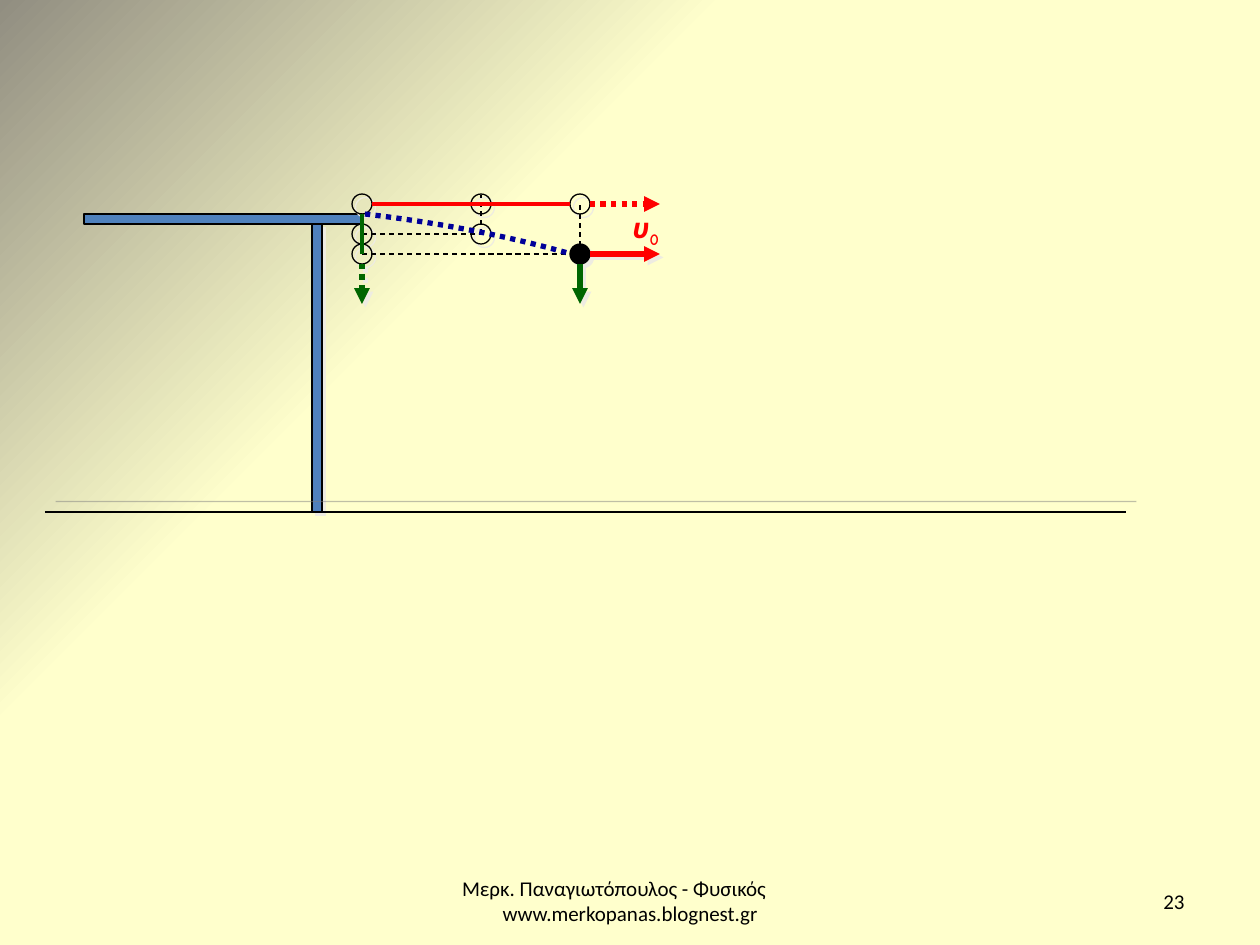
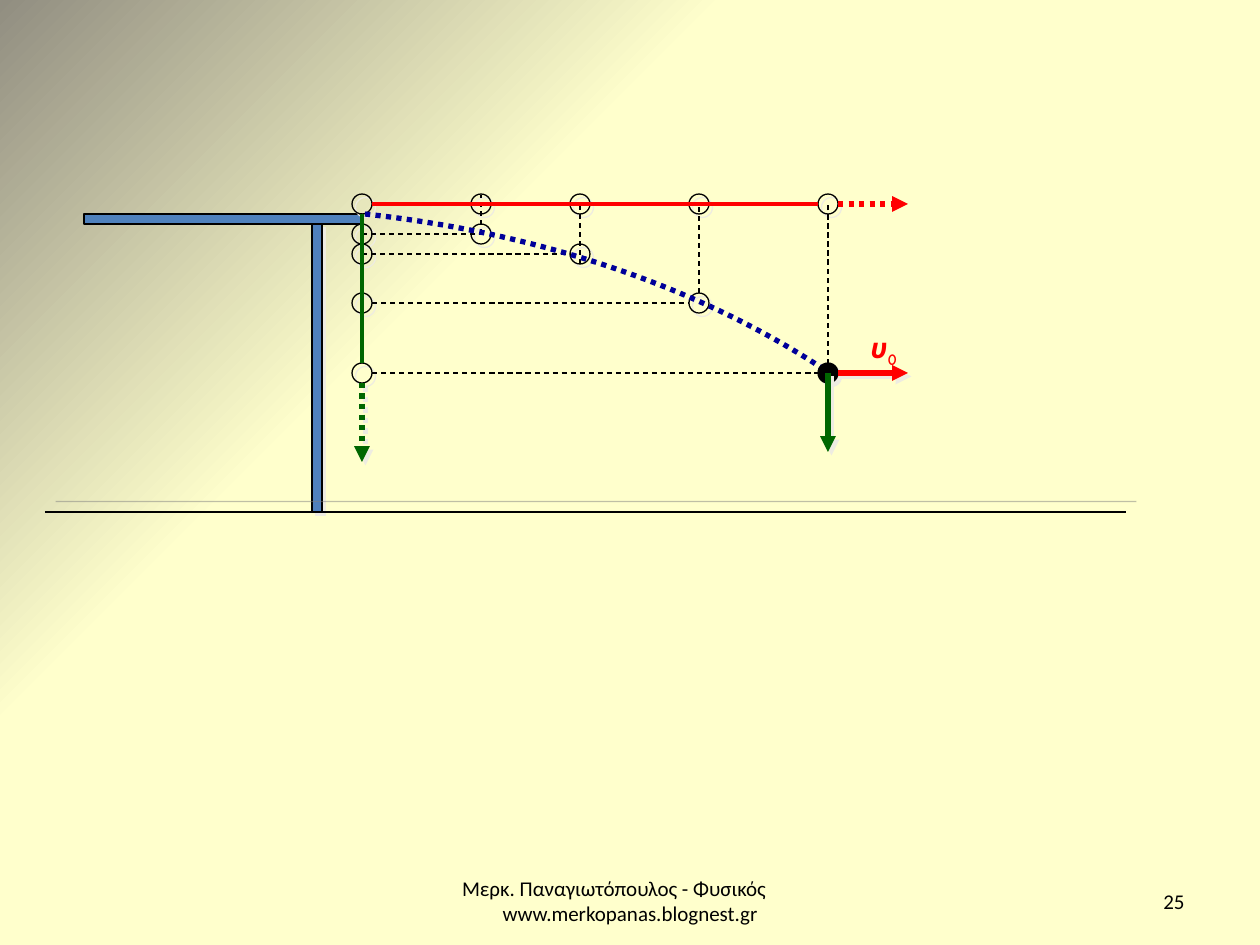
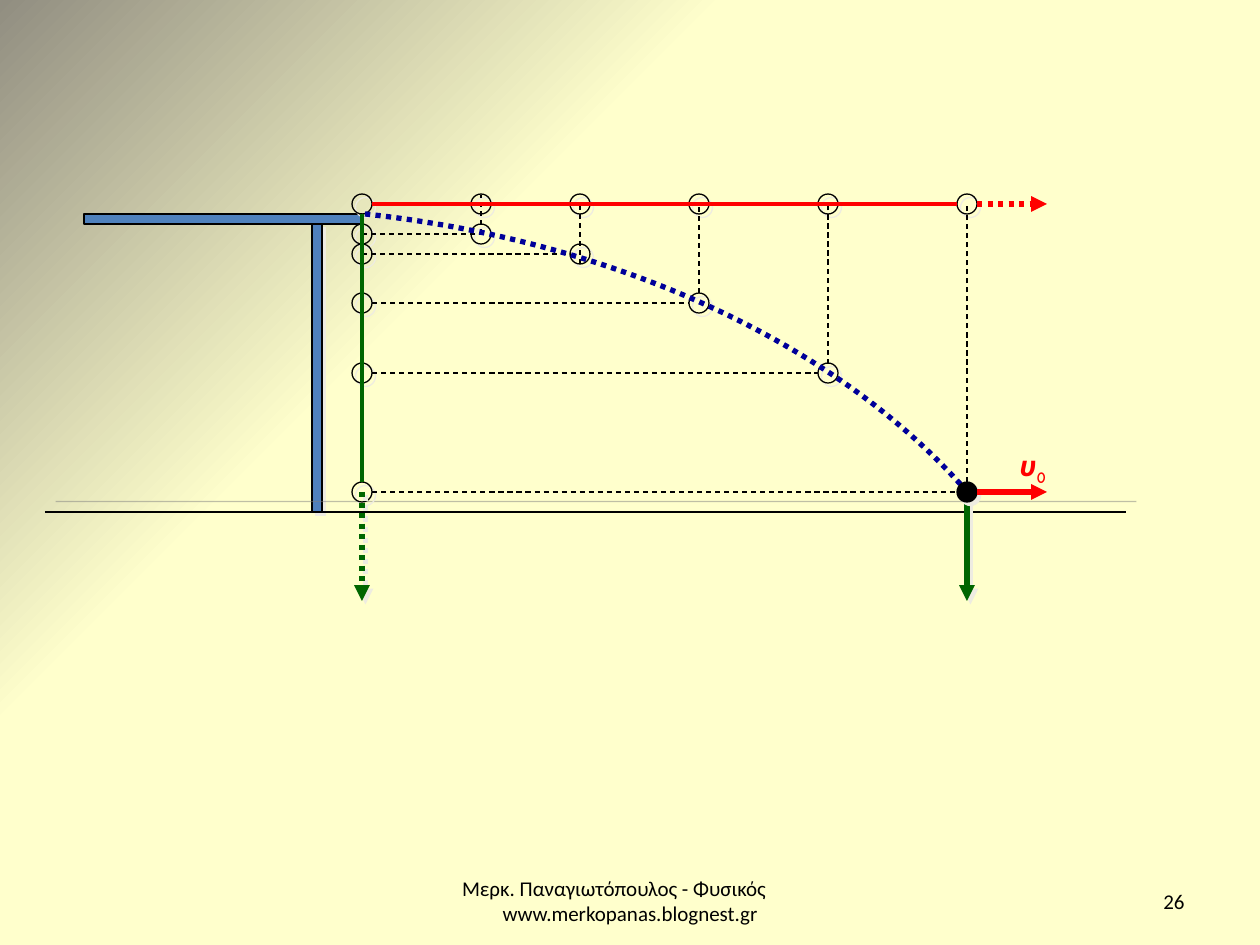
from collections import namedtuple
from lxml.etree import SubElement as Sub
from pptx import Presentation
from pptx.dml.color import RGBColor as RGB
from pptx.enum.dml import MSO_LINE as DASH
from pptx.enum.shapes import MSO_CONNECTOR as CONN, MSO_SHAPE as SHAPE
from pptx.enum.text import MSO_ANCHOR as ANCHOR, PP_ALIGN as ALIGN
from pptx.oxml.ns import qn
from pptx.util import Emu, Inches, Pt

# Colours and fonts
CREAM = RGB(0xFF, 0xFF, 0xCC)
STONE = RGB(0x91, 0x8E, 0x81)
BLACK = RGB(0, 0, 0)
BLUE = RGB(0x4F, 0x81, 0xBD)
NAVY = RGB(0, 0, 0x99)
RED = RGB(0xFF, 0, 0)
GREEN = RGB(0, 0x66, 0)
PALE = RGB(0xEE, 0xEC, 0xE1)
GREY = RGB(0x80, 0x80, 0x80)
SANS, COMIC = "Calibri", "Comic Neue"

# Shadows: colour, opacity %, distance in points, angle in degrees
SOFT = (PALE, 100, 2.8, 45)
FAR = (GREY, 50, 8.5, 315)

# Lengths in px
UNIT = 914400 / 126
RAD = 10          # ball radius
LEFT, TOP = 362, 204   # centre of the ball at the start
REACH = 80        # from ball centre to tip of a red arrow

# Ball positions, with the ends of their dashed guides
Stop = namedtuple("Stop", "x y top foot near far")
STOPS = [
    Stop(481, 234, 195, 234, 362, 481),
    Stop(580, 254, 204, 264, 362, 570),
    Stop(699, 303, 204, 293, 372, 689),
    Stop(828, 373, 204, 364, 372, 818),
    Stop(967, 492, 204, 482, 372, 957),
]

# One view per slide: page, number of stops, curve points after its start,
# label box, (from, to) of the dotted and solid green arrows,
# whether the solid one lies over the ball, shadow of the red arrow
View = namedtuple("View", "page count curve label ghost fall over shade")
VIEWS = [
    View("23", 2, [(441, 223), (515, 237), (585, 258)], (620, 204, 69, 47),
         (264, 304), (264, 304), True, SOFT),
    View("25", 4, [(539, 233), (701, 287), (828, 372)], (858, 324, 69, 47),
         (383, 462), (373, 452), True, SOFT),
    View("26", 5, [(622, 242), (847, 348), (975, 501)], (1007, 442, 59, 47),
         (492, 601), (492, 601), False, None),
]


def px(num):
    return Emu(round(num * UNIT))


def write(para, text, size=12, font=SANS, color=BLACK, bold=False,
          slant=False, base=0):
    run = para.add_run()
    run.text = text
    face = run.font
    face.size, face.name, face.color.rgb = Pt(size), font, color
    face.bold, face.italic = bold, slant
    if base:
        run._r.get_or_add_rPr().set("baseline", str(base * 1000))


class Deck:
    def __init__(self):
        self.prs = Presentation()
        self.prs.slide_width, self.prs.slide_height = Inches(10), Inches(7.5)
        self.slide = None
        self.paint()

    def paint(self):
        """Give the master a gradient that spreads from the lower right."""
        master = self.prs.slide_master
        fill = master.background.fill
        fill.gradient()
        for stop, (pos, color) in zip(fill.gradient_stops,
                                      [(0.67, CREAM), (1, STONE)]):
            stop.position, stop.color.rgb = pos, color
        grad = master.element.find(".//" + qn("p:bg") + "//" + qn("a:gradFill"))
        grad.remove(grad.find(qn("a:lin")))
        ring = Sub(grad, qn("a:path"), path="circle")
        Sub(ring, qn("a:fillToRect"), l="100000", t="100000")

    def new(self):
        self.slide = self.prs.slides.add_slide(self.prs.slide_layouts[6])

    def style(self, item, color=BLACK, width=0.75, dash=None, shade=None):
        """Set outline and shadow."""
        line = item.line
        line.color.rgb, line.width = color, Pt(width)
        if dash:
            line.dash_style = dash
        fx = Sub(item.element.spPr, qn("a:effectLst"))
        if shade:
            tint, alpha, dist, angle = shade
            cast = Sub(fx, qn("a:outerShdw"), dist=str(Pt(dist)),
                       dir=str(angle * 60000), algn="ctr", rotWithShape="0")
            clr = Sub(cast, qn("a:srgbClr"), val=str(tint))
            Sub(clr, qn("a:alpha"), val=str(alpha * 1000))

    def shape(self, kind, box, fill=None, shade=None):
        item = self.slide.shapes.add_shape(kind, *map(px, box))
        if fill is None:
            item.fill.background()
        else:
            item.fill.solid()
            item.fill.fore_color.rgb = fill
        self.style(item, shade=shade)

    def ball(self, x, y, fill=None):
        self.shape(SHAPE.OVAL, (x - RAD, y - RAD, 2 * RAD, 2 * RAD),
                   fill, SOFT)

    def line(self, x1, y1, x2, y2, head=False, **look):
        item = self.slide.shapes.add_connector(
            CONN.STRAIGHT, *map(px, (x1, y1, x2, y2)))
        self.style(item, **look)
        if head:
            Sub(item.element.spPr.find(qn("a:ln")), qn("a:tailEnd"),
                type="triangle")

    def arrow(self, *ends, **look):
        self.line(*ends, head=True, width=3, **look)

    def curve(self, start, points):
        """Draw one Bezier arc: two control points, then the end."""
        form = self.slide.shapes.build_freeform(*start, scale=UNIT)
        form.add_line_segments(points, close=False)
        item = form.convert_to_shape()
        item.fill.background()
        self.style(item, NAVY, 3, DASH.ROUND_DOT)
        route = item.element.spPr.find(".//" + qn("a:path"))
        bend = Sub(route, qn("a:cubicBezTo"))
        for leg in route.findall(qn("a:lnTo")):
            bend.append(leg[0])
            route.remove(leg)

    def text(self, box, align=ALIGN.LEFT, anchor=ANCHOR.TOP):
        frame = self.slide.shapes.add_textbox(*map(px, box)).text_frame
        frame.word_wrap, frame.vertical_anchor = True, anchor
        frame.paragraphs[0].alignment = align
        return frame

    def footer(self, page):
        shift = 32
        frame = self.text((431, 876, 399, 50), ALIGN.CENTER, ANCHOR.MIDDLE)
        frame.margin_right = px(13 + shift)
        write(frame.paragraphs[0], "Μερκ. Παναγιωτόπουλος - Φυσικός")
        site = frame.add_paragraph()
        site.alignment = ALIGN.CENTER
        site._p.get_or_add_pPr().set("marL", str(px(shift)))
        write(site, "www.merkopanas.blognest.gr")
        frame = self.text((903, 876, 294, 50), ALIGN.RIGHT, ANCHOR.MIDDLE)
        write(frame.paragraphs[0], page)

    def label(self, box):
        para = self.text(box).paragraphs[0]
        gap = Sub(para._p.get_or_add_pPr(), qn("a:spcBef"))
        Sub(gap, qn("a:spcPct"), val="50000")
        look = dict(size=16, font=COMIC, color=RED, bold=True)
        write(para, "υ", slant=True, **look)
        write(para, "0", base=-25, **look)

    def table(self):
        self.shape(SHAPE.RECTANGLE, (84, 214, 278, 10), BLUE)
        self.shape(SHAPE.RECTANGLE, (312, 224, 10, 288), BLUE, SOFT)
        self.line(45, 512, 1126, 512, shade=FAR)


def draw(deck, view):
    deck.new()
    deck.footer(view.page)
    deck.table()
    stops = STOPS[:view.count]
    last = stops[-1]

    # Projections on both axes and their guides
    deck.ball(LEFT, TOP)
    for stop in stops:
        deck.ball(stop.x, TOP)
        deck.ball(LEFT, stop.y)
        if stop is not last:
            deck.ball(stop.x, stop.y)
        deck.line(stop.x, stop.foot, stop.x, stop.top, dash=DASH.DASH)
        deck.line(stop.near, stop.y, stop.far, stop.y, dash=DASH.DASH)

    # Dotted velocity arrows on the axes
    start, end = last.x + RAD, last.x + REACH
    deck.arrow(start, TOP, end, TOP, color=RED, dash=DASH.ROUND_DOT)
    deck.arrow(LEFT, view.ghost[0], LEFT, view.ghost[1], color=GREEN,
               dash=DASH.ROUND_DOT, shade=SOFT)

    # Flight path, moving ball and its velocities
    fall = (last.x, view.fall[0], last.x, view.fall[1])
    if not view.over:
        deck.arrow(*fall, color=GREEN, shade=SOFT)
    deck.curve((365, 214), view.curve)
    deck.ball(last.x, last.y, BLACK)
    deck.arrow(start, last.y, end, last.y, color=RED, shade=view.shade)
    deck.label(view.label)
    if view.over:
        deck.arrow(*fall, color=GREEN, shade=SOFT)

    # Distance covered along each axis
    deck.line(LEFT + RAD, TOP, last.x - RAD, TOP, color=RED, width=2.25)
    foot = last.y if view.count == 2 else last.y - RAD
    deck.line(LEFT, TOP + RAD, LEFT, foot, color=GREEN, width=2.25)


def main():
    deck = Deck()
    for view in VIEWS:
        draw(deck, view)
    deck.prs.save("out.pptx")


if __name__ == "__main__":
    main()
